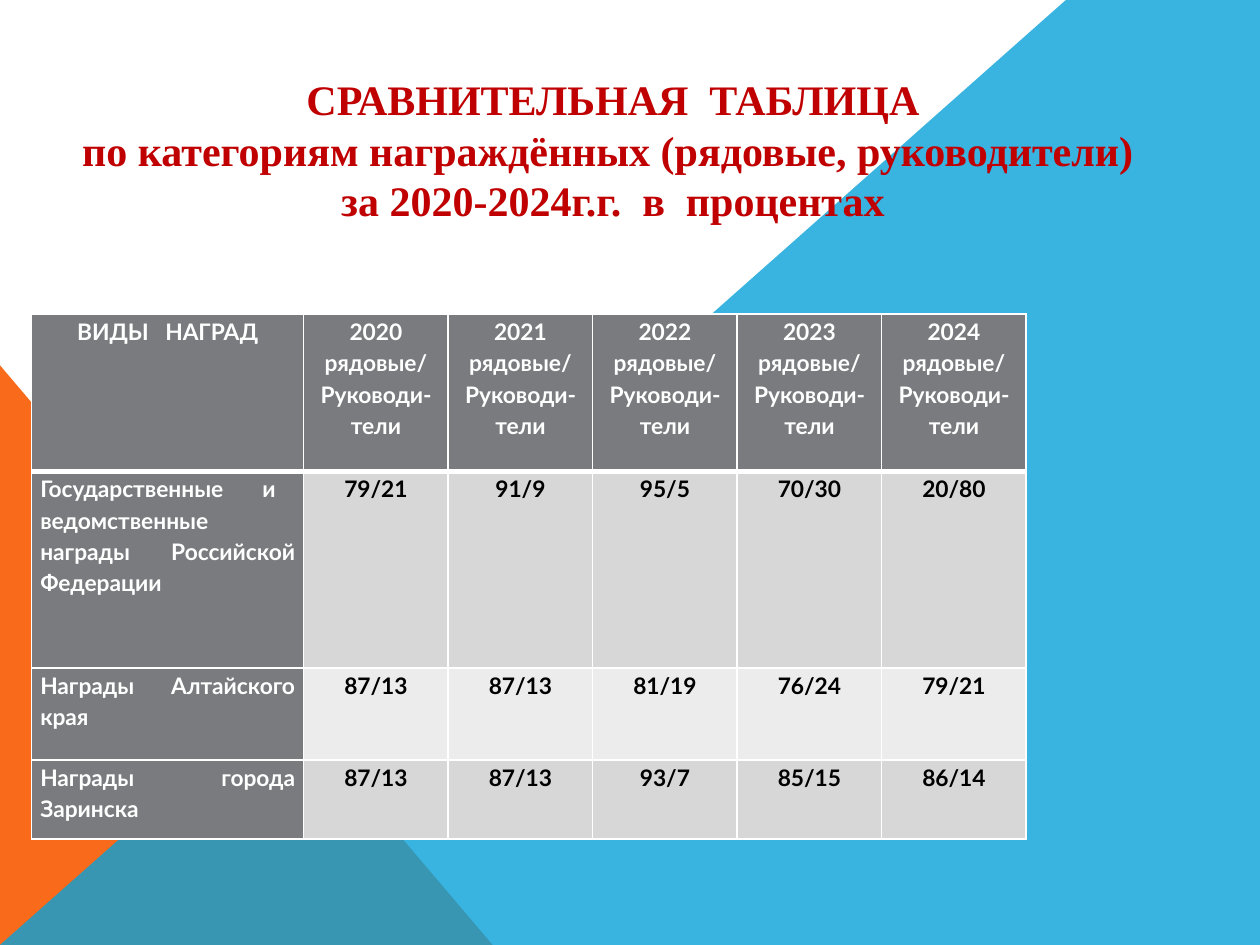
import pptx
import pptx.util
import pptx.dml.color
import pptx.enum.shapes
import pptx.enum.text
import pptx.oxml
import pptx.oxml.ns

COLORS = {
    "white": "FFFFFF",
    "black": "000000",
    "orange": "F96A1B",
    "blue": "08A1D9",
    "red": "C00000",
    "header": "797B7E",
    "band": "D7D7D8",
    "light": "ECECEC",
}
ALIGN = pptx.enum.text.PP_ALIGN
YEARS = range(2020, 2025)
AWARDS = [
    ("Государственные  и  ведомственные награды  Российской Федерации",
     ["79/21", "91/9", "95/5", "70/30", "20/80"]),
    ("Награды Алтайского края",
     ["87/13", "87/13", "81/19", "76/24", "79/21"]),
    ("Награды города Заринска",
     ["87/13", "87/13", "93/7", "85/15", "86/14"]),
]


class SlideBuilder:
    columns, rows = 100, 75
    title_font, table_font = "Times New Roman", "Lato"
    title_size, table_size = 24, 13

    def __init__(self, presentation):
        self.width = presentation.slide_width
        self.height = presentation.slide_height
        self.slide = presentation.slides.add_slide(presentation.slide_layouts[6])

    def x(self, column):
        return round(self.width * column / self.columns)

    def y(self, row):
        return round(self.height * row / self.rows)

    def box(self, left, top, width, height):
        return self.x(left), self.y(top), self.x(width), self.y(height)

    def color(self, name):
        return pptx.dml.color.RGBColor.from_string(COLORS[name])

    def paint(self, shape, color, opacity=100):
        shape.shadow.inherit = False
        shape.line.fill.background()
        shape.fill.solid()
        shape.fill.fore_color.rgb = self.color(color)
        if opacity < 100:
            solid = shape.element.spPr.find(pptx.oxml.ns.qn("a:solidFill"))
            alpha = solid[0].makeelement(pptx.oxml.ns.qn("a:alpha"), {"val": str(opacity * 1000)})
            solid[0].append(alpha)

    def triangle(self, place, color):
        kind = pptx.enum.shapes.MSO_SHAPE.RIGHT_TRIANGLE
        self.paint(self.slide.shapes.add_shape(kind, *self.box(*place)), color)

    def polygon(self, points, color, opacity):
        corners = [(self.x(column), self.y(row)) for column, row in points]
        builder = self.slide.shapes.build_freeform(*corners[0])
        builder.add_line_segments(corners[1:], close=True)
        self.paint(builder.convert_to_shape(), color, opacity)

    def add_lines(self, frame, lines, font, size, color, align, spacing=1.0):
        for index, line in enumerate(lines):
            paragraph = frame.paragraphs[0] if index == 0 else frame.add_paragraph()
            paragraph.alignment = align
            paragraph.line_spacing = spacing
            run = paragraph.add_run()
            run.text = line
            run.font.name = font
            run.font.size = pptx.util.Pt(size)
            run.font.bold = True
            run.font.color.rgb = self.color(color)

    def title(self, place, lines):
        frame = self.slide.shapes.add_textbox(*self.box(*place)).text_frame
        frame.word_wrap = False
        frame.vertical_anchor = pptx.enum.text.MSO_ANCHOR.MIDDLE
        frame.margin_bottom = self.y(3.4)
        self.add_lines(frame, lines, self.title_font, self.title_size, "red", ALIGN.CENTER)

    def border(self, cell, side, points):
        properties = cell._tc.get_or_add_tcPr()
        properties.append(pptx.oxml.parse_xml(
            f'<a:ln{side} {pptx.oxml.ns.nsdecls("a")} w="{pptx.util.Pt(points)}">'
            f'<a:solidFill><a:srgbClr val="{COLORS["white"]}"/></a:solidFill></a:ln{side}>'))

    def cell(self, cell, lines, fill, color, align, top=1, bottom=1):
        for side, points in zip("LRTB", (1, 1, top, bottom)):
            self.border(cell, side, points)
        cell.fill.solid()
        cell.fill.fore_color.rgb = self.color(fill)
        cell.margin_left = cell.margin_right = self.x(0.7)
        cell.margin_top = cell.margin_bottom = 0
        self.add_lines(cell.text_frame, lines, self.table_font, self.table_size, color, align, 1.15)

    def table(self, left, top, widths, heights):
        place = self.box(left, top, sum(widths), sum(heights))
        table = self.slide.shapes.add_table(len(heights), len(widths), *place).table
        for column, width in zip(table.columns, widths):
            column.width = self.x(width)
        for row, height in zip(table.rows, heights):
            row.height = self.y(height)
        return table


def main():
    presentation = pptx.Presentation()
    presentation.slide_width = pptx.util.Inches(10)
    presentation.slide_height = pptx.util.Inches(7.5)
    builder = SlideBuilder(presentation)

    builder.triangle((0, 29, 39.1, 46), "orange")
    builder.polygon([(0, 75), (84.6, 0), (100, 0), (100, 75)], "blue", 80)

    table = builder.table(2.5, 24.9, [21.6] + [11.47] * len(YEARS), [12.5, 15.6, 7.3, 6.3])
    headings = [["ВИДЫ   НАГРАД"]]
    headings += [[str(year), "рядовые/", "Руководи-тели"] for year in YEARS]
    for column, lines in enumerate(headings):
        builder.cell(table.cell(0, column), lines, "header", "white", ALIGN.CENTER, bottom=3)
    for row, (award, shares) in enumerate(AWARDS, 1):
        top = 3 if row == 1 else 1
        builder.cell(table.cell(row, 0), [award], "header", "white", ALIGN.JUSTIFY, top)
        fill = "band" if row % 2 else "light"
        for column, share in enumerate(shares, 1):
            builder.cell(table.cell(row, column), [share], fill, "black", ALIGN.CENTER, top)

    builder.title((5.1, 5.2, 87.1, 16.2), [
        "СРАВНИТЕЛЬНАЯ  ТАБЛИЦА",
        "по категориям награждённых (рядовые, руководители) ",
        "за 2020-2024г.г.  в  процентах",
    ])
    presentation.save("out.pptx")


if __name__ == "__main__":
    main()
